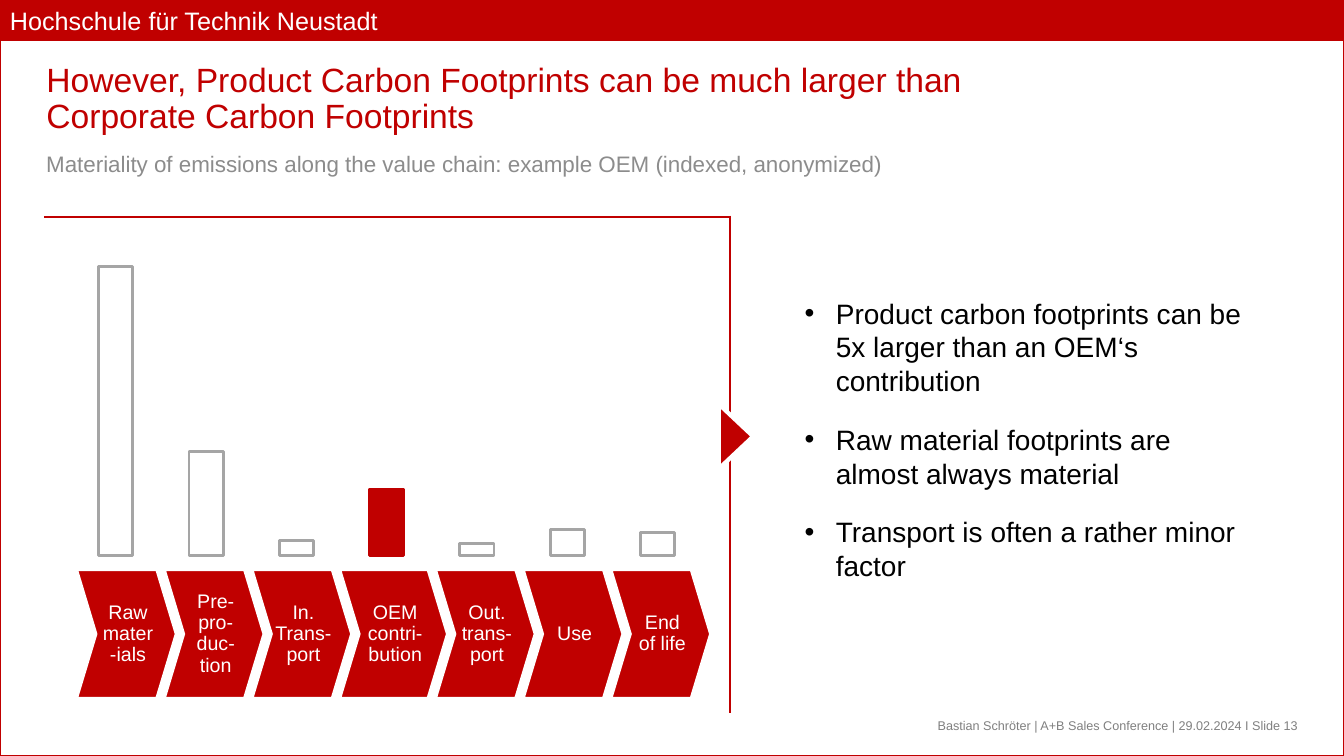
import copy

import pptx
import pptx.chart.data
import pptx.dml.color
import pptx.enum.chart
import pptx.enum.shapes
import pptx.enum.text
import pptx.oxml
import pptx.oxml.ns
import pptx.util
from lxml import etree

PX = 9144  # 100 px to the inch
RED, WHITE, GREY = "C00000", "FFFFFF", "A5A5A5"
ALIGN = pptx.enum.text.PP_ALIGN
ANCHOR = pptx.enum.text.MSO_ANCHOR
SHAPE = pptx.enum.shapes.MSO_SHAPE
QN = pptx.oxml.ns.qn

STAGES = [("Raw mater-ials", 100), ("Pre-pro-duc-tion", 36), ("In. Trans-port", 5),
          ("OEM contri-bution", 23), ("Out. trans-port", 4), ("Use", 9), ("End of life", 8)]
OEM = 3
POINTS = ["Product carbon footprints can be 5x larger than an OEM‘s contribution",
          "Raw material footprints are almost always material",
          "Transport is often a rather minor factor"]


def rgb(code):
    return pptx.dml.color.RGBColor.from_string(code)


def box(*sides):
    return [side * PX for side in sides]


def place(shape, *sides):
    shape.left, shape.top, shape.width, shape.height = box(*sides)


def paint(shape, fill=None, line=None, width=1):
    if fill:
        shape.fill.solid()
        shape.fill.fore_color.rgb = rgb(fill)
    else:
        shape.fill.background()
    if line:
        shape.line.color.rgb = rgb(line)
        shape.line.width = pptx.util.Pt(width)
    else:
        shape.line.fill.background()


def write(shape, *lines, size, color, align=ALIGN.LEFT, anchor=ANCHOR.TOP,
          inset=(10, 5, 10, 5), lead=None, before=0, bullet=False):
    """Fill a shape with one paragraph per line, all in one format."""
    frame = shape.text_frame
    frame.auto_size = pptx.enum.text.MSO_AUTO_SIZE.NONE
    frame.word_wrap = True
    frame.vertical_anchor = anchor
    (frame.margin_left, frame.margin_top,
     frame.margin_right, frame.margin_bottom) = box(*inset)
    for i, line in enumerate(lines):
        para = frame.add_paragraph() if i else frame.paragraphs[0]
        para.text = line
        para.alignment = align
        para.space_before = pptx.util.Pt(before)
        if lead:
            para.line_spacing = lead
        for run in para.runs:
            run.font.name = "Arial"
            run.font.size = pptx.util.Pt(size)
            run.font.color.rgb = rgb(color)
        for gap in para._p.findall(QN("a:br")):
            gap.append(copy.deepcopy(para.runs[0]._r.rPr))
        if bullet:
            props = para._p.get_or_add_pPr()
            props.set("marL", str(31 * PX))
            props.set("indent", str(-31 * PX))
            etree.SubElement(props, QN("a:buChar")).set("char", "•")


def block(slide, kind, sides, **look):
    shape = slide.shapes.add_shape(kind, *box(*sides))
    shape.shadow.inherit = False
    paint(shape, **look)
    return shape


def label(slide, sides, text, **form):
    write(slide.shapes.add_textbox(*box(*sides)), text, **form)


def rule(slide, *ends):
    line = slide.shapes.add_connector(
        pptx.enum.shapes.MSO_CONNECTOR.STRAIGHT, *box(*ends))
    line.line.color.rgb = rgb(RED)
    line.line.width = pptx.util.Pt(1.5)
    etree.SubElement(line._element.spPr, QN("a:effectLst"))


def arrow(slide, left, width, text):
    """Draw one chevron of the value chain."""
    top, mid, base, tip = 566, 629, 692, 19
    right = left + width
    pen = slide.shapes.build_freeform(left, top, scale=PX)
    pen.add_line_segments([(right - tip, top), (right, mid), (right - tip, base),
                           (left, base), (left + tip, mid)], close=True)
    shape = pen.convert_to_shape()
    shape.shadow.inherit = False
    paint(shape, RED, WHITE)
    write(shape, text, size=14, color=WHITE, align=ALIGN.CENTER,
          anchor=ANCHOR.MIDDLE, inset=(22, 1, 19, 1), lead=0.9)


def bars(slide):
    data = pptx.chart.data.CategoryChartData()
    data.categories = [str(i + 1) for i in range(len(STAGES))]
    data.add_series("Series 1", [value for _, value in STAGES])
    chart = slide.shapes.add_chart(pptx.enum.chart.XL_CHART_TYPE.COLUMN_CLUSTERED,
                                   *box(57, 212, 653, 346), data).chart
    chart.has_legend = chart.has_title = False
    chart.font.name = "Arial"
    chart.font.size = pptx.util.Pt(10)
    chart.font.color.rgb = rgb("000000")
    chart.category_axis.visible = chart.value_axis.visible = False
    chart.value_axis.has_major_gridlines = False
    chart.value_axis.minimum_scale = 0
    chart.value_axis.maximum_scale = 110
    plot = chart.plots[0]
    plot.gap_width, plot.overlap = 164, -35
    plot.vary_by_categories = False
    series = plot.series[0]
    series.invert_if_negative = False
    paint(series.format, line=GREY, width=2)
    paint(series.points[OEM].format, RED, RED, 2)
    area = chart._chartSpace.chart.plotArea
    for old in area.findall(QN("c:layout")):
        area.remove(old)
    sizes = {"layoutTarget": "inner", "xMode": "edge", "yMode": "edge",
             "x": 0.02, "y": 0.07, "w": 0.96, "h": 0.91}
    layout = etree.Element(QN("c:layout"))
    manual = etree.SubElement(layout, QN("c:manualLayout"))
    for tag, value in sizes.items():
        etree.SubElement(manual, QN("c:" + tag)).set("val", str(value))
    area.insert(0, layout)


def main():
    deck = pptx.Presentation()
    deck.slide_width, deck.slide_height = box(1333, 750)
    slide = deck.slides.add_slide(deck.slide_layouts[1])
    title, body = slide.placeholders

    head = block(slide, SHAPE.RECTANGLE, (0, 0, 1333, 40), fill=RED, line=RED)
    write(head, "Hochschule für Technik Neustadt", size=18, color=WHITE,
          anchor=ANCHOR.MIDDLE)
    block(slide, SHAPE.RECTANGLE, (0, 0, 1333, 750), line=RED)
    label(slide, (760, 692, 537, 40),
          "Bastian Schröter | A+B Sales Conference | 29.02.2024 I Slide 13",
          size=9, color="808080", align=ALIGN.RIGHT, anchor=ANCHOR.BOTTOM)

    place(title, 36, 58, 1001, 104)
    write(title, "However, Product Carbon Footprints can be much larger than\v"
          "Corporate Carbon Footprints", size=24, color=RED, lead=0.9)
    label(slide, (36, 142, 1206, 40),
          "Materiality of emissions along the value chain: "
          "example OEM (indexed, anonymized)",
          size=16, color="8C8C8C", anchor=ANCHOR.MIDDLE)

    bars(slide)
    left = 77
    for i, (name, _) in enumerate(STAGES):
        width = 105 if i == OEM else 97
        arrow(slide, left, width, name)
        left += width - 10

    place(body, 788, 289, 457, 296)
    write(body, *POINTS, size=20, color="000000", before=18, bullet=True)
    rule(slide, 724, 214, 724, 707)
    wedge = block(slide, SHAPE.ISOSCELES_TRIANGLE, (698, 416, 64, 34),
                  fill=RED, line=WHITE, width=3)
    wedge.rotation = 90
    rule(slide, 724, 215, 44, 215)

    deck.save("out.pptx")


if __name__ == "__main__":
    main()
